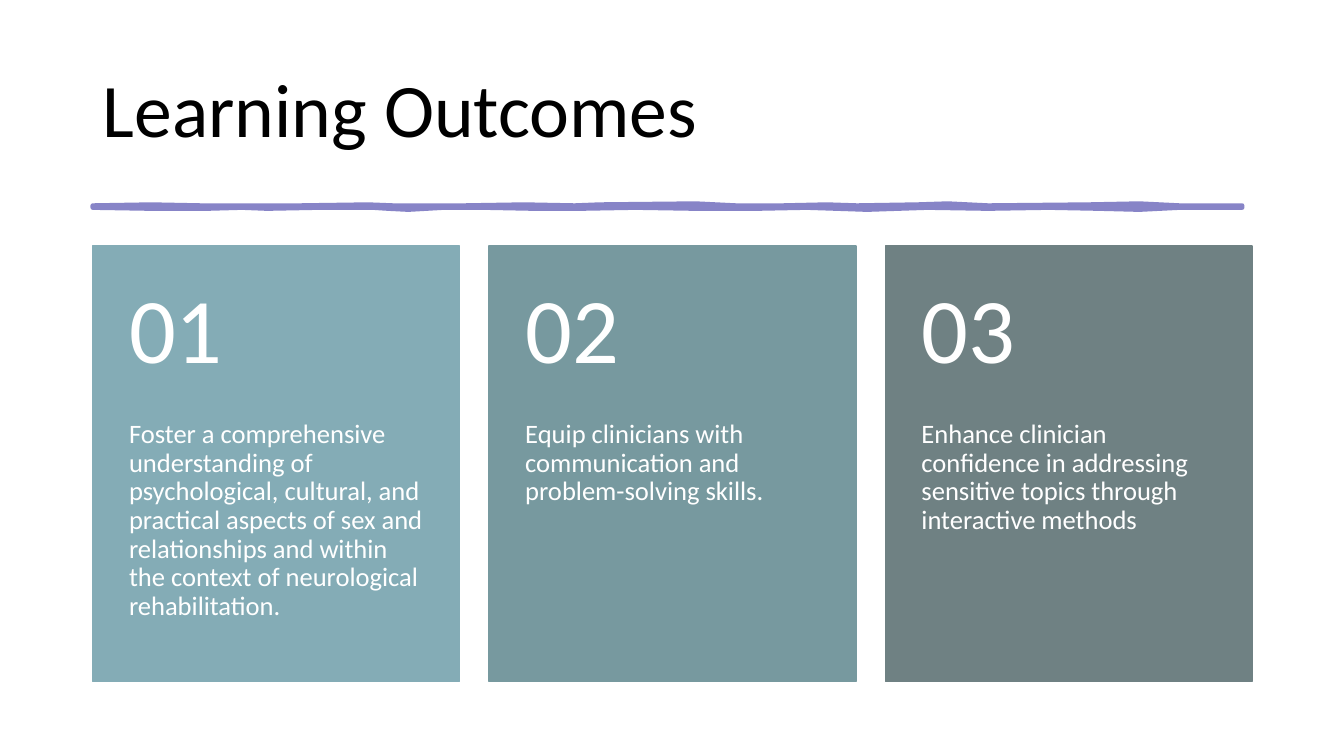
from dataclasses import dataclass

from pptx import Presentation
from pptx.dml.color import RGBColor
from pptx.enum.shapes import MSO_SHAPE
from pptx.enum.text import MSO_ANCHOR, MSO_AUTO_SIZE, PP_ALIGN
from pptx.shapes.base import BaseShape
from pptx.slide import Slide
from pptx.util import Inches, Pt

FONT = "Calibri"
WHITE = "FFFFFF"
LEFT, CARD_TOP = 0.92, 2.44
CARD_W, CARD_H, CARD_STEP = 3.64, 4.32, 3.93
NUMBER_H = 1.73


@dataclass
class Card:
    fill: str
    text: str


CARDS = [
    Card("84ACB6", "Foster a comprehensive understanding of psychological, cultural, "
         "and practical aspects of sex and relationships and within the context of "
         "neurological rehabilitation."),
    Card("77999F", "Equip clinicians with communication and problem-solving skills."),
    Card("6F8183", "Enhance clinician confidence in addressing sensitive topics "
         "through interactive methods"),
]

# Edges of the hand-drawn rule, both from left to right
RULE_TOP = [(0.92, 2.04), (1.5, 2.03), (2.0, 2.04), (2.44, 2.04), (2.97, 2.04),
            (3.65, 2.03), (3.9, 2.04), (4.6, 2.04), (5.2, 2.03), (5.7, 2.04),
            (5.95, 2.03), (6.9, 2.02), (7.3, 2.04), (7.76, 2.04), (8.2, 2.03),
            (8.5, 2.04), (9.1, 2.03), (9.4, 2.02), (9.8, 2.04), (10.8, 2.03),
            (11.3, 2.02), (11.7, 2.04), (12.32, 2.04)]
RULE_BOTTOM = [(0.92, 2.06), (1.5, 2.07), (2.05, 2.07), (2.4, 2.06), (2.65, 2.07),
               (3.16, 2.06), (3.7, 2.06), (3.85, 2.07), (4.05, 2.08), (4.4, 2.06),
               (4.8, 2.06), (5.3, 2.07), (5.75, 2.07), (6.3, 2.06), (6.9, 2.07),
               (7.5, 2.07), (8.0, 2.06), (8.3, 2.07), (8.6, 2.08), (9.2, 2.06),
               (9.8, 2.07), (10.4, 2.06), (10.9, 2.07), (11.3, 2.08), (11.7, 2.06),
               (12.32, 2.06)]


def color(value: str) -> RGBColor:
    return RGBColor.from_string(value)


def paint(sp: BaseShape, value: str, width: float) -> None:
    sp.shadow.inherit = False
    sp.fill.solid()
    sp.fill.fore_color.rgb = color(value)
    sp.line.color.rgb = color(value)
    sp.line.width = Pt(width)


def place(sp: BaseShape, x: float, y: float, w: float, h: float) -> None:
    sp.left, sp.top, sp.width, sp.height = map(Inches, (x, y, w, h))


def write(sp: BaseShape, text: str, *, size: float, fill: str = WHITE,
          anchor: MSO_ANCHOR = MSO_ANCHOR.TOP,
          insets: tuple[float, ...] = (0.1, 0.05, 0.1, 0.05)) -> None:
    tf = sp.text_frame
    tf.word_wrap = True
    tf.auto_size = MSO_AUTO_SIZE.NONE
    tf.vertical_anchor = anchor
    tf.margin_left, tf.margin_top, tf.margin_right, tf.margin_bottom = map(Inches, insets)
    p = tf.paragraphs[0]
    p.alignment = PP_ALIGN.LEFT
    p.line_spacing = 0.9
    r = p.add_run()
    r.text = text
    r.font.name = FONT
    r.font.size = Pt(size)
    r.font.color.rgb = color(fill)


def add_rule(slide: Slide) -> None:
    outline = [(Inches(x), Inches(y)) for x, y in RULE_TOP + RULE_BOTTOM[::-1]]
    builder = slide.shapes.build_freeform(*outline[0])
    builder.add_line_segments(outline[1:], close=True)
    paint(builder.convert_to_shape(), "8784C7", 3.25)


def add_card(slide: Slide, index: int, card: Card) -> None:
    x = LEFT + index * CARD_STEP
    sp = slide.shapes.add_shape(MSO_SHAPE.RECTANGLE, 0, 0, 0, 0)
    place(sp, x, CARD_TOP, CARD_W, CARD_H)
    paint(sp, card.fill, 1)

    body = slide.shapes.add_textbox(0, 0, 0, 0)
    place(body, x, CARD_TOP + NUMBER_H, CARD_W, CARD_H - NUMBER_H)
    write(body, card.text, size=19, insets=(0.36, 0, 0.36, 0.36))

    number = slide.shapes.add_textbox(0, 0, 0, 0)
    place(number, x, CARD_TOP, CARD_W, NUMBER_H)
    write(number, f"{index + 1:02d}", size=66, anchor=MSO_ANCHOR.MIDDLE,
          insets=(0.36, 0.18, 0.36, 0.18))


def main() -> None:
    prs = Presentation()
    prs.slide_width, prs.slide_height = Inches(13.33), Inches(7.5)
    slide = prs.slides.add_slide(prs.slide_layouts[5])

    # Title
    title = slide.shapes.title
    place(title, LEFT, 0.4, 11.5, 1.45)
    write(title, "Learning Outcomes", size=54, fill="000000", anchor=MSO_ANCHOR.MIDDLE)

    # Rule and numbered cards
    add_rule(slide)
    for index, card in enumerate(CARDS):
        add_card(slide, index, card)

    prs.save("out.pptx")


if __name__ == "__main__":
    main()
